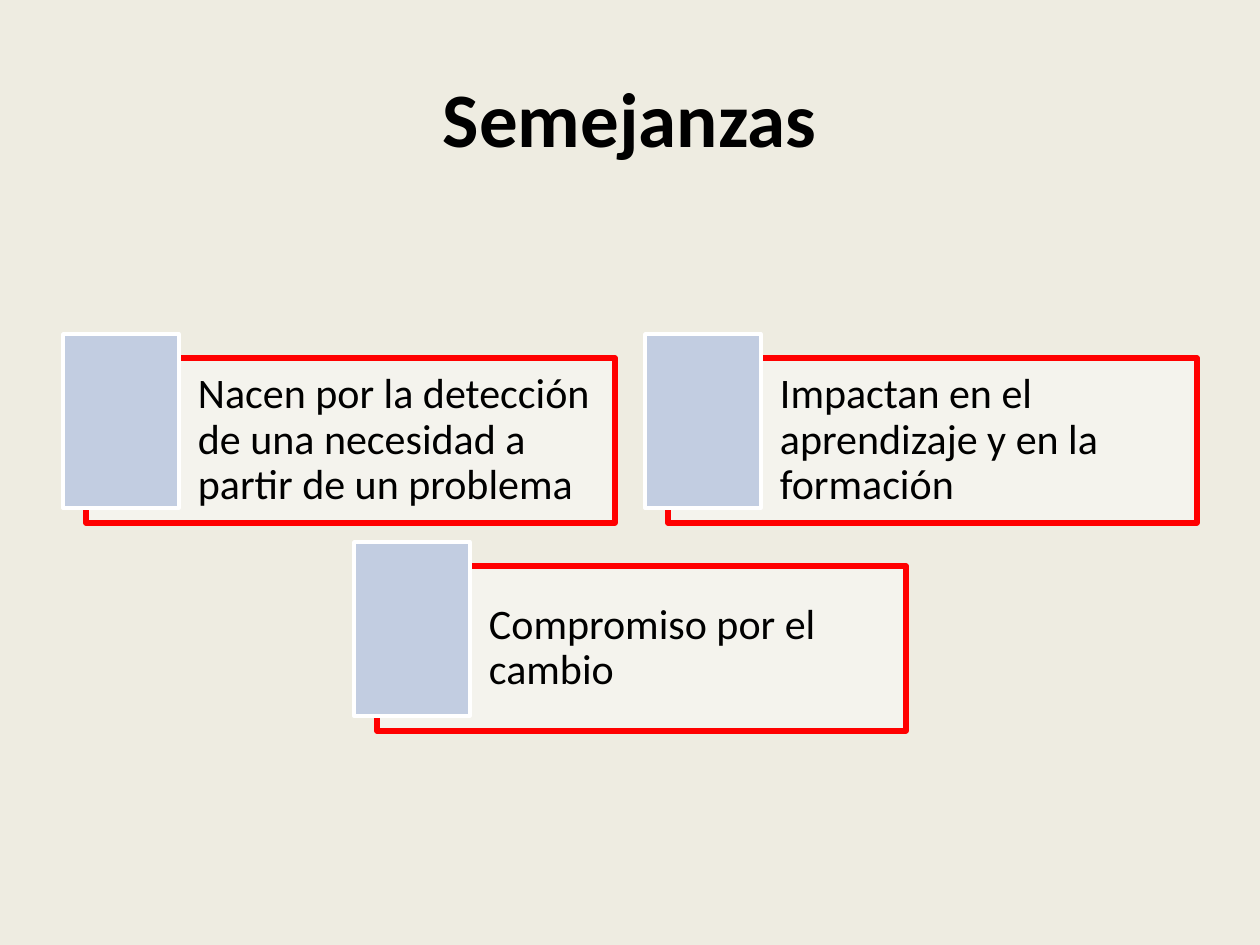
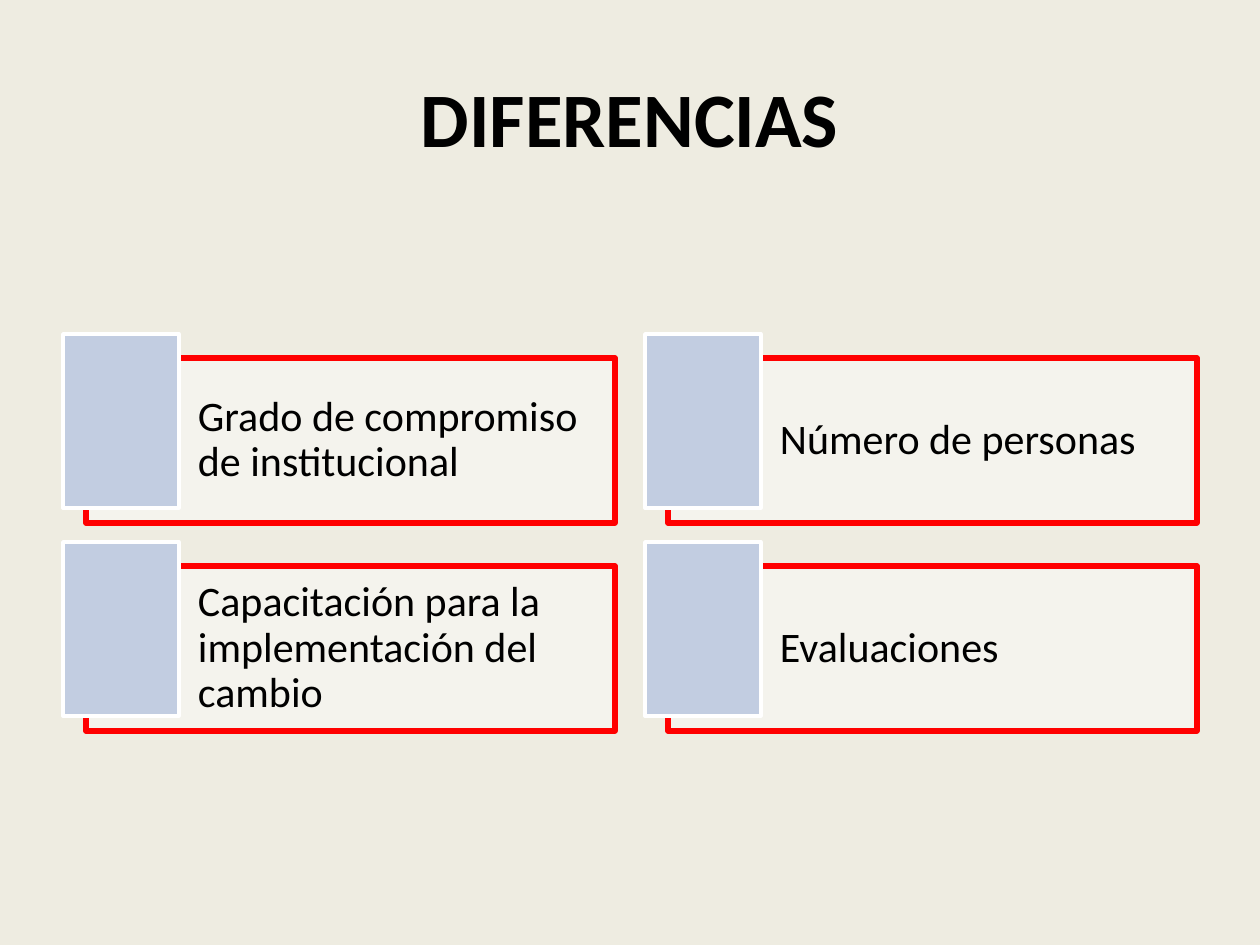
import pptx
import pptx.dml.color
import pptx.enum.shapes
import pptx.enum.text
import pptx.oxml
import pptx.oxml.ns
import pptx.util

RGBColor = pptx.dml.color.RGBColor
SAND = RGBColor(0xEE, 0xEC, 0xE1)
WHITE = RGBColor(0xFF, 0xFF, 0xFF)
RED = RGBColor(0xFF, 0x00, 0x00)
PALE_BLUE = RGBColor(0xC2, 0xCD, 0xE1)
BLACK = RGBColor(0x00, 0x00, 0x00)

EMU_PER_PX = 914400 / 126
SLIDE_SIZE = (1260, 945)
TITLE_BOX = (63, 38, 1134, 157)
CARDS_BOX = (63, 334, 1134, 397)
CARD_SIZE = (552, 189)
TAB_SIZE = (116, 174)
PANEL_OFFSET = (23, 24)
COLUMNS = 2
PANEL_OPACITY = 40

ALIGN = pptx.enum.text.PP_ALIGN
TITLE_FONT = {"size": pptx.util.Pt(44), "bold": True}
CARD_FONT = {"size": pptx.util.Pt(24), "bold": False}
TITLE_PARAGRAPH = {"alignment": ALIGN.CENTER}
CARD_PARAGRAPH = {"alignment": ALIGN.LEFT, "line_spacing": 0.9}

SLIDES = [
    ("Semejanzas", [
        "Nacen por la detección de una necesidad a partir de un problema",
        "Impactan en el aprendizaje y en la formación",
        "Compromiso por el cambio",
    ]),
    ("DIFERENCIAS", [
        "Grado de compromiso de institucional",
        "Número de personas",
        "Capacitación para la implementación del cambio",
        "Evaluaciones",
    ]),
]


def px(length):
    """Turn pixels into EMU."""
    return pptx.util.Emu(round(length * EMU_PER_PX))


def set_format(target, values):
    """Set each attribute named in values on the target."""
    for name, value in values.items():
        setattr(target, name, value)


def write_text(shape, text, margins, paragraph_format, font_format):
    """Write one vertically centred paragraph into a shape."""
    frame = shape.text_frame
    set_format(frame, {
        "word_wrap": True,
        "vertical_anchor": pptx.enum.text.MSO_ANCHOR.MIDDLE,
    })
    sides = ("margin_left", "margin_top", "margin_right", "margin_bottom")
    set_format(frame, dict(zip(sides, map(px, margins))))
    paragraph = frame.paragraphs[0]
    set_format(paragraph, paragraph_format)
    run = paragraph.add_run()
    run.text = text
    set_format(run.font, {"name": "Calibri", **font_format})
    run.font.color.rgb = BLACK


def add_rectangle(slide, box, fill_color, line_color, line_points):
    """Add a flat rectangle with a solid fill and outline."""
    kind = pptx.enum.shapes.MSO_SHAPE.RECTANGLE
    shape = slide.shapes.add_shape(kind, *map(px, box))
    shape.shadow.inherit = False
    shape.fill.solid()
    shape.fill.fore_color.rgb = fill_color
    shape.line.color.rgb = line_color
    shape.line.width = pptx.util.Pt(line_points)
    return shape


def set_opacity(shape, percent):
    """Make the solid fill of a shape partly transparent."""
    qn = pptx.oxml.ns.qn
    color = shape.element.spPr.find(qn("a:solidFill")).find(qn("a:srgbClr"))
    alpha = color.makeelement(qn("a:alpha"), {"val": str(percent * 1000)})
    color.append(alpha)


def add_title(slide, box, text):
    """Add the centred slide title."""
    shape = slide.shapes.add_textbox(*map(px, box))
    write_text(shape, text, (13, 6, 13, 6), TITLE_PARAGRAPH, TITLE_FONT)


def add_card(slide, box, text):
    """Add an outlined text panel with a tab over its top left corner."""
    left, top, width, height = box
    shift_x, shift_y = PANEL_OFFSET
    panel_box = (left + shift_x, top + shift_y, width - shift_x, height - shift_y)
    panel = add_rectangle(slide, panel_box, WHITE, RED, 3)
    set_opacity(panel, PANEL_OPACITY)
    write_text(panel, text, (112, 13, 13, 13), CARD_PARAGRAPH, CARD_FONT)
    add_rectangle(slide, (left, top, *TAB_SIZE), PALE_BLUE, WHITE, 2)


def add_cards(slide, box, texts):
    """Fill the box with rows of cards, centring a row that is not full."""
    left, top, width, height = box
    card_width, card_height = CARD_SIZE
    pitch_x = (width - card_width) // (COLUMNS - 1)
    pitch_y = height - card_height
    for row, start in enumerate(range(0, len(texts), COLUMNS)):
        row_texts = texts[start:start + COLUMNS]
        indent = (COLUMNS - len(row_texts)) * pitch_x // 2
        for column, text in enumerate(row_texts):
            card_left = left + indent + column * pitch_x
            card_top = top + row * pitch_y
            add_card(slide, (card_left, card_top, *CARD_SIZE), text)


def main():
    """Build and save the presentation."""
    presentation = pptx.Presentation()
    presentation.slide_width, presentation.slide_height = map(px, SLIDE_SIZE)
    background = presentation.slide_master.background.fill
    background.solid()
    background.fore_color.rgb = SAND
    for title, texts in SLIDES:
        slide = presentation.slides.add_slide(presentation.slide_layouts[6])
        add_title(slide, TITLE_BOX, title)
        add_cards(slide, CARDS_BOX, texts)
    presentation.save("out.pptx")


if __name__ == "__main__":
    main()
